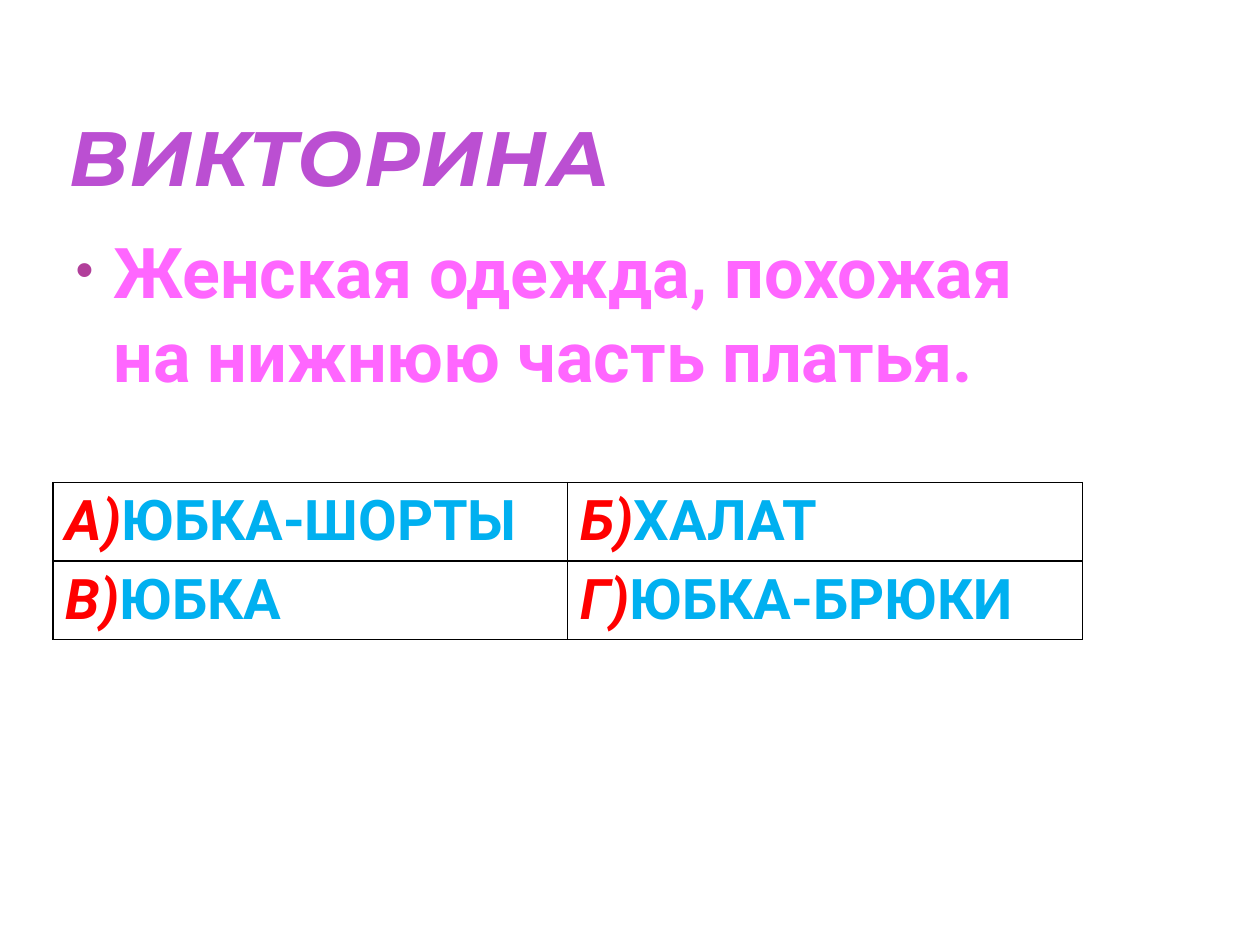
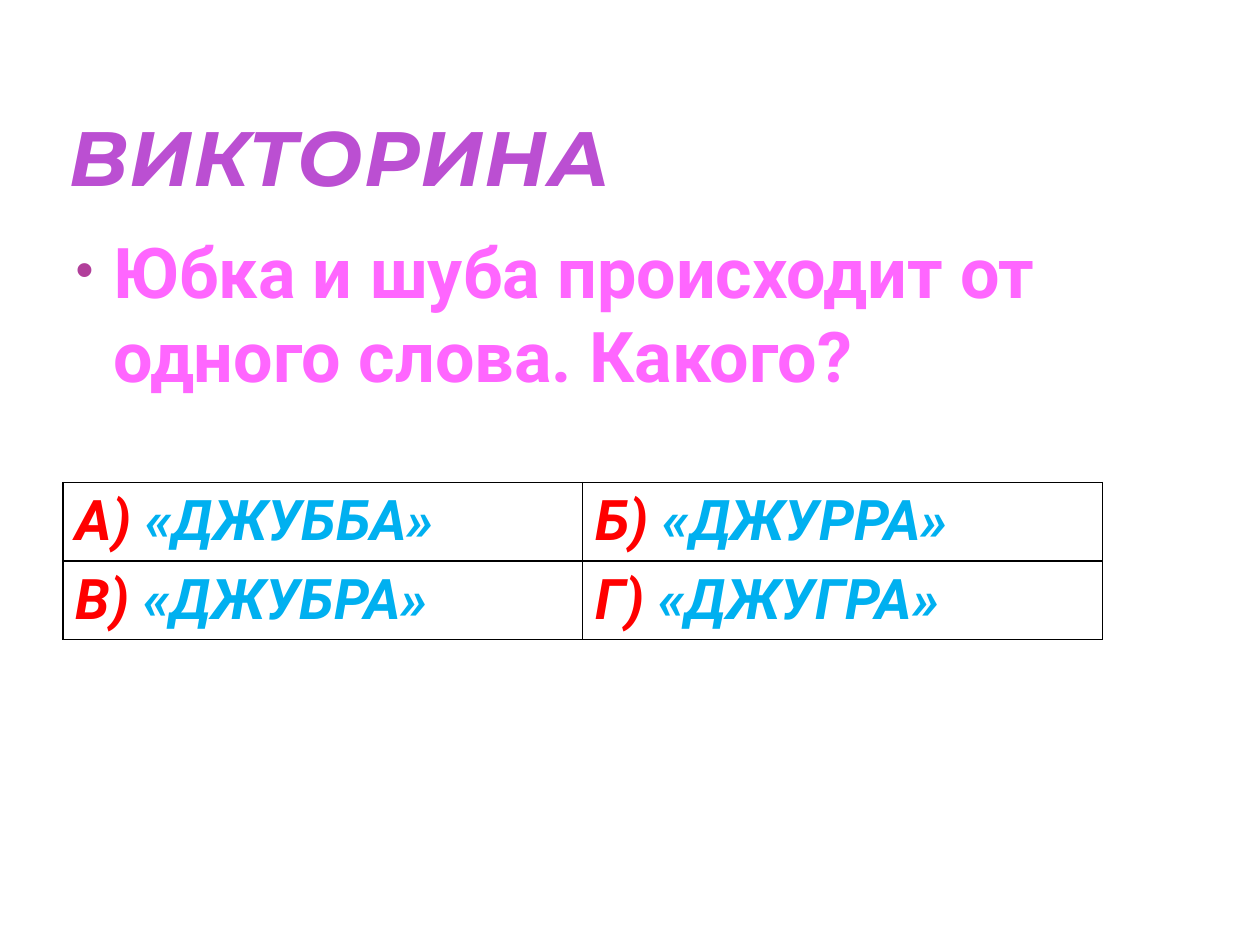
from lxml.etree import SubElement
from pptx import Presentation
from pptx.dml.color import RGBColor
from pptx.enum.text import MSO_ANCHOR as Anchor, MSO_AUTO_SIZE as AutoSize, PP_ALIGN as Align
from pptx.oxml.ns import qn
from pptx.util import Inches, Pt

COLORS = {
    "title": "BB4FD2",
    "question": "FF66FF",
    "bullet": "B13F9A",
    "letter": "FF0000",
    "answer": "00B0F0",
    "border": "000000",
}
TITLE_FONT, TEXT_FONT = "Montserrat", "Roboto"

# Boxes: left, top, width, height
TITLE_BOX = (0.5, 0.35, 7.92, 1.25)
BODY_BOX = (0.5, 1.76, 7.92, 5.3)
TABLE_TOP, TABLE_HEIGHT = 3.83, 1.24

QUIZ = [
    {
        "question": "Женская одежда, похожая на нижнюю часть платья.",
        "table_box": (0.42, TABLE_TOP, 8.17, TABLE_HEIGHT),
        "italic_answers": False,
        "answers": [
            [("А)", "ЮБКА-ШОРТЫ"), ("Б)", "ХАЛАТ")],
            [("В)", "ЮБКА"), ("Г)", "ЮБКА-БРЮКИ")],
        ],
    },
    {
        "question": "Юбка и шуба происходит от одного слова. Какого?",
        "table_box": (0.5, TABLE_TOP, 8.25, TABLE_HEIGHT),
        "italic_answers": True,
        "answers": [
            [("А) ", "«ДЖУББА»"), ("Б)", " «ДЖУРРА»")],
            [("В) ", "«ДЖУБРА»"), ("Г)", " «ДЖУГРА»")],
        ],
    },
]


def set_all(target, **values):
    for name, value in values.items():
        setattr(target, name, value)


def place(shape, box):
    sides = ("left", "top", "width", "height")
    set_all(shape, **{side: Inches(length) for side, length in zip(sides, box)})


def add_span(para, text, color, size, font=TEXT_FONT, italic=False):
    span = para.add_run()
    span.text = text
    set_all(span.font, name=font, size=Pt(size), bold=True, italic=italic)
    span.font.color.rgb = RGBColor.from_string(COLORS[color])
    return span


def add_title(page, box):
    title = page.shapes.title
    place(title, box)
    frame = title.text_frame
    set_all(frame, auto_size=AutoSize.NONE, word_wrap=True, vertical_anchor=Anchor.BOTTOM,
            margin_left=Inches(0.05), margin_right=Inches(0.05), margin_top=0, margin_bottom=0)
    para = frame.paragraphs[0]
    para.alignment = Align.LEFT
    span = add_span(para, "ВИКТОРИНА", "title", 44, TITLE_FONT, italic=True)
    span.font._element.set("spc", "50")


def add_bullet(para):
    properties = para._p.get_or_add_pPr()
    properties.set("marL", str(Inches(0.3)))
    properties.set("indent", str(-Inches(0.3)))
    color = SubElement(properties, qn("a:buClr"))
    SubElement(color, qn("a:srgbClr"), val=COLORS["bullet"])
    SubElement(properties, qn("a:buSzPct"), val="73000")
    SubElement(properties, qn("a:buFont"), typeface="Arial")
    SubElement(properties, qn("a:buChar"), char="•")


def add_question(page, box, question):
    body = page.placeholders[1]
    place(body, box)
    set_all(body.text_frame, auto_size=AutoSize.NONE, word_wrap=True)
    para = body.text_frame.paragraphs[0]
    add_bullet(para)
    para.space_before = Pt(0)
    add_span(para, question, "question", 40)


def add_borders(cell):
    properties = cell._tc.get_or_add_tcPr()
    for side in ("lnL", "lnR", "lnT", "lnB"):
        line = SubElement(properties, qn(f"a:{side}"), w=str(Pt(1)))
        fill = SubElement(line, qn("a:solidFill"))
        SubElement(fill, qn("a:srgbClr"), val=COLORS["border"])


def add_answers(page, box, answers, italic):
    lengths = [Inches(length) for length in box]
    table = page.shapes.add_table(len(answers), len(answers[0]), *lengths).table
    set_all(table, first_row=False, horz_banding=False)
    for row, choices in enumerate(answers):
        for column, (letter, answer) in enumerate(choices):
            cell = table.cell(row, column)
            add_borders(cell)
            cell.fill.background()
            para = cell.text_frame.paragraphs[0]
            add_span(para, letter, "letter", 32, italic=True)
            add_span(para, answer, "answer", 32, italic=italic)


def add_quiz_page(deck, quiz):
    page = deck.slides.add_slide(deck.slide_layouts[1])
    add_title(page, TITLE_BOX)
    add_question(page, BODY_BOX, quiz["question"])
    add_answers(page, quiz["table_box"], quiz["answers"], quiz["italic_answers"])


def main():
    deck = Presentation()
    set_all(deck, slide_width=Inches(10), slide_height=Inches(7.5))
    for quiz in QUIZ:
        add_quiz_page(deck, quiz)
    deck.save("out.pptx")


if __name__ == "__main__":
    main()
